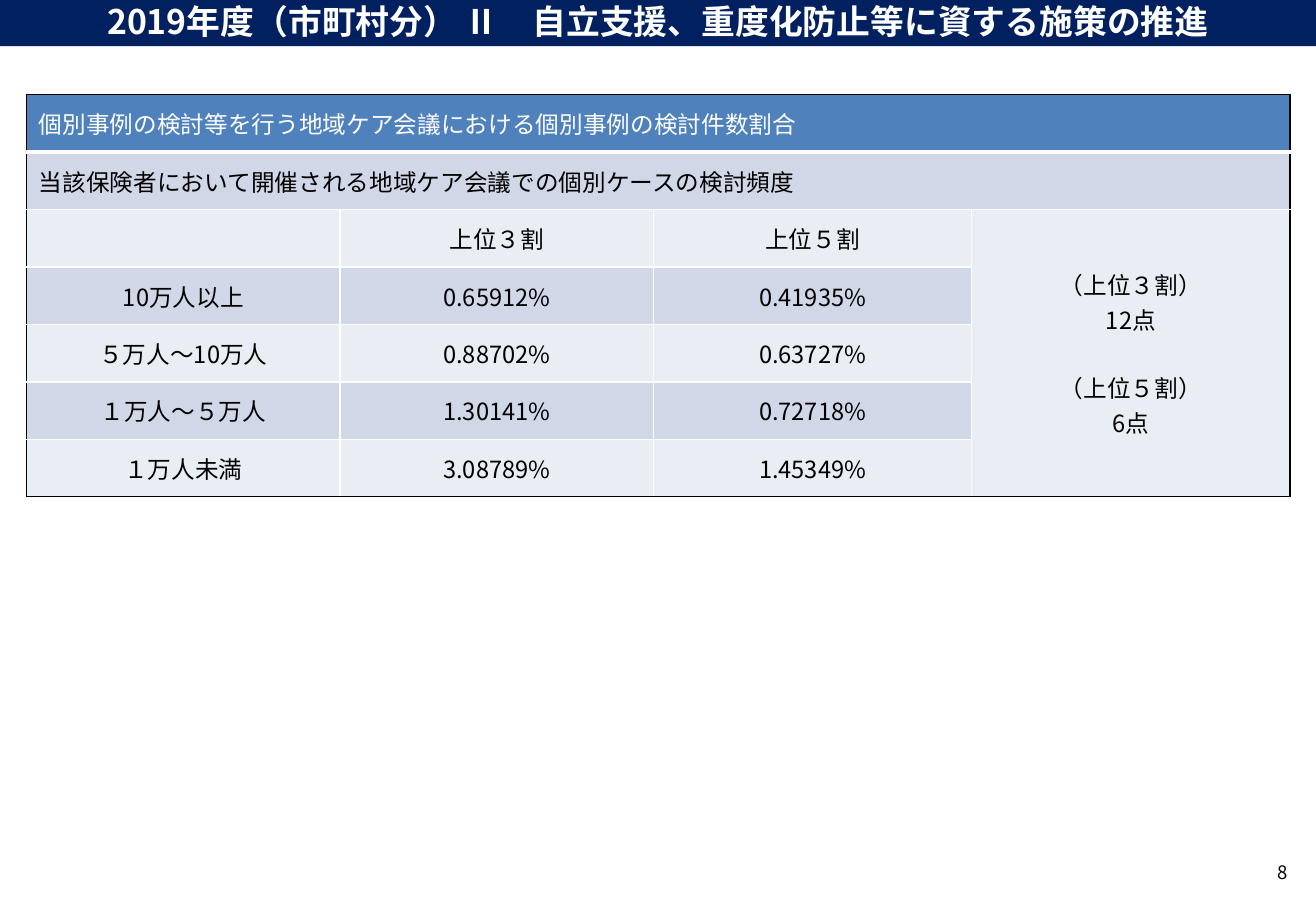
import lxml.etree
import pptx
import pptx.dml.color
import pptx.enum.shapes
import pptx.enum.text
import pptx.oxml.ns
import pptx.util

Pt = pptx.util.Pt
RGBColor = pptx.dml.color.RGBColor
Align = pptx.enum.text.PP_ALIGN
Anchor = pptx.enum.text.MSO_ANCHOR
qn = pptx.oxml.ns.qn

FONT = "Noto Sans CJK JP"
NAVY = RGBColor(0x00, 0x20, 0x60)
BLUE = RGBColor(0x4F, 0x81, 0xBD)
BAND_DARK = RGBColor(0xD0, 0xD8, 0xE8)
BAND_LIGHT = RGBColor(0xE9, 0xED, 0xF4)
WHITE = RGBColor(0xFF, 0xFF, 0xFF)
BLACK = RGBColor(0x00, 0x00, 0x00)

COLUMN_WIDTHS = [185.76, 185.76, 188.64, 188.64]
ROW_HEIGHT = 34.05
LINE_HEIGHT = 20.3
POINTS = ["（上位３割）", "12点", "（上位５割）", "6点"]
ROWS = [
    ["個別事例の検討等を行う地域ケア会議における個別事例の検討件数割合"],
    ["当該保険者において開催される地域ケア会議での個別ケースの検討頻度"],
    ["", "上位３割", "上位５割", "\n".join(POINTS)],
    ["10万人以上", "0.65912%", "0.41935%"],
    ["５万人～10万人", "0.88702%", "0.63727%"],
    ["１万人～５万人", "1.30141%", "0.72718%"],
    ["１万人未満", "3.08789%", "1.45349%"],
]


def apply_format(target, values):
    """Set each attribute of the target from a dict of format values."""
    for name, value in values.items():
        setattr(target, name, value)


def write_text(text_frame, text, size, color, alignment, bold=False):
    """Write lines of text as paragraphs in one format."""
    apply_format(text_frame, {"text": text, "word_wrap": True, "vertical_anchor": Anchor.MIDDLE})
    for paragraph in text_frame.paragraphs:
        paragraph.alignment = alignment
        for run in paragraph.runs:
            apply_format(run.font, {"size": Pt(size), "bold": bold, "name": FONT})
            run.font.color.rgb = color
            properties = run.font._element
            lxml.etree.SubElement(properties, qn("a:ea"), typeface=FONT)


def set_borders(cell, borders):
    """Draw the cell's sides from (side, colour, width) entries."""
    properties = cell._tc.get_or_add_tcPr()
    for index, (side, color, width) in enumerate(borders):
        line = lxml.etree.Element(qn(f"a:ln{side}"), w=str(Pt(width)))
        fill = lxml.etree.SubElement(line, qn("a:solidFill"))
        lxml.etree.SubElement(fill, qn("a:srgbClr"), val=str(color))
        properties.insert(index, line)


def format_cell(cell, row, column, text):
    """Fill, outline and write one table cell."""
    cell.fill.solid()
    cell.fill.fore_color.rgb = BLUE if row == 0 else BAND_DARK if row % 2 else BAND_LIGHT
    at_right = column + cell.span_width == len(COLUMN_WIDTHS)
    at_bottom = row + cell.span_height == len(ROWS)
    set_borders(cell, [
        ("L", WHITE if column else BLACK, 1),
        ("R", BLACK if at_right else WHITE, 1),
        ("T", WHITE if row else BLACK, 1),
        ("B", BLACK if at_bottom else WHITE, 1 if row else 3),
    ])
    alignment = Align.LEFT if row < 2 else Align.CENTER
    write_text(cell.text_frame, text, 14, BLACK if row else WHITE, alignment)
    cell.vertical_anchor = Anchor.MIDDLE


def add_score_table(slide):
    """Add the table of review frequencies by population."""
    frame = slide.shapes.add_table(
        len(ROWS), len(COLUMN_WIDTHS), Pt(15.84), Pt(56.16),
        Pt(sum(COLUMN_WIDTHS)), Pt(ROW_HEIGHT * len(ROWS)))
    table = frame.table
    apply_format(table, {"first_row": False, "horz_banding": False})
    for column, width in zip(table.columns, COLUMN_WIDTHS):
        column.width = Pt(width)
    for row in table.rows:
        row.height = Pt(ROW_HEIGHT)
    for row in (0, 1):
        table.cell(row, 0).merge(table.cell(row, 3))
    points_cell = table.cell(2, 3)
    points_cell.merge(table.cell(6, 3))
    for row, texts in enumerate(ROWS):
        for column, text in enumerate(texts):
            cell = table.cell(row, column)
            format_cell(cell, row, column, text)
    points_cell.text_frame.paragraphs[2].space_before = Pt(LINE_HEIGHT)


def add_title_bar(slide, text):
    """Add the navy title bar across the top."""
    shape = slide.shapes.add_shape(
        pptx.enum.shapes.MSO_SHAPE.RECTANGLE, Pt(0), Pt(-2.16), Pt(780), Pt(29.52))
    shape.shadow.inherit = False
    shape.fill.solid()
    shape.fill.fore_color.rgb = NAVY
    shape.line.fill.background()
    write_text(shape.text_frame, text, 20, WHITE, Align.CENTER, bold=True)


def add_page_number(slide, text):
    """Add the page number at the lower right."""
    shape = slide.shapes.add_textbox(Pt(588.24), Pt(502.56), Pt(182.16), Pt(28.8))
    write_text(shape.text_frame, text, 11, BLACK, Align.RIGHT)


def main():
    """Build and save the slide."""
    presentation = pptx.Presentation()
    apply_format(presentation, {"slide_width": Pt(780), "slide_height": Pt(540)})
    slide = presentation.slides.add_slide(presentation.slide_layouts[6])
    add_score_table(slide)
    add_title_bar(slide, "2019年度（市町村分） Ⅱ　自立支援、重度化防止等に資する施策の推進")
    add_page_number(slide, "8")
    presentation.save("out.pptx")


if __name__ == "__main__":
    main()
